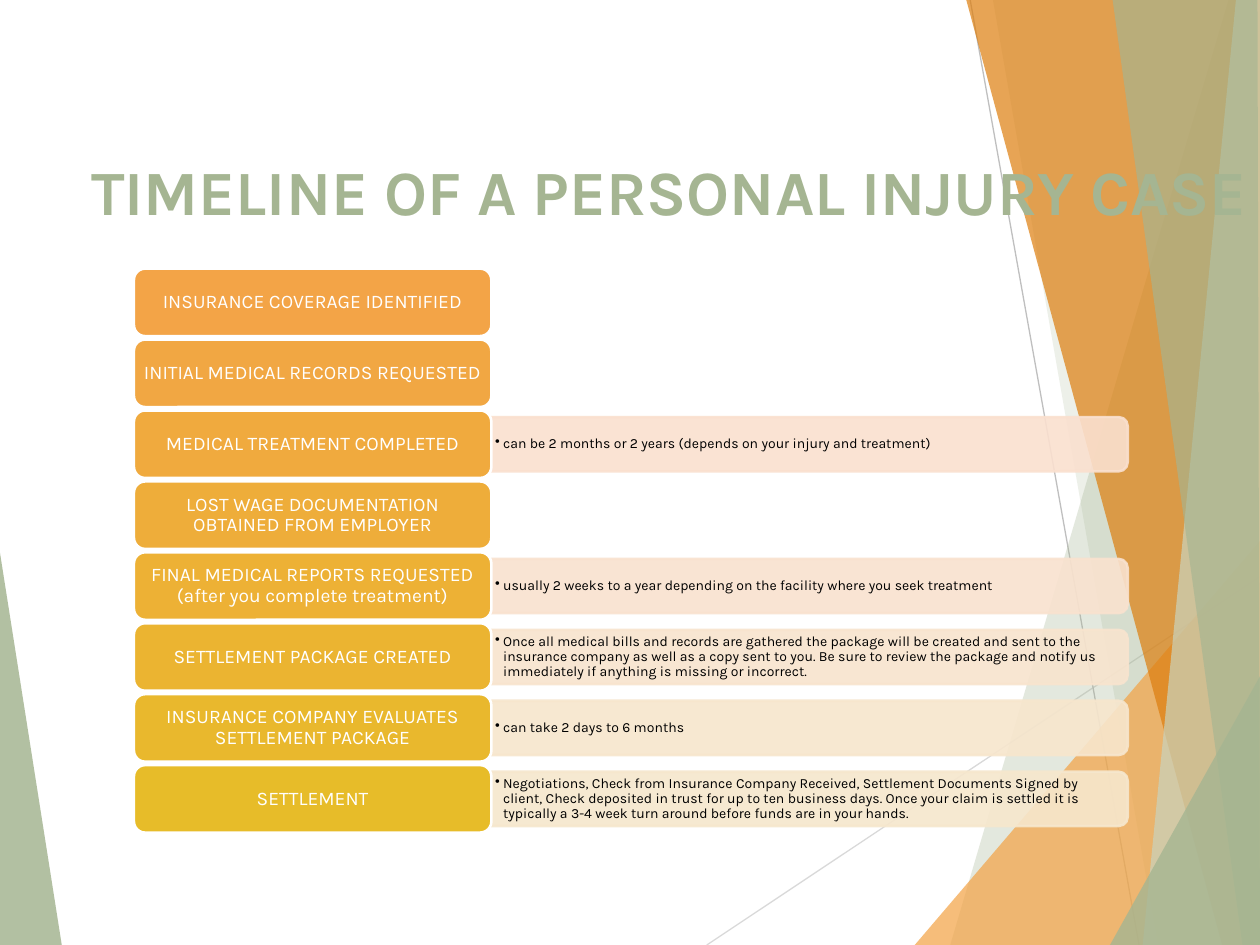
from dataclasses import dataclass

from lxml import etree
from pptx import Presentation
from pptx import util as u
from pptx.dml.color import RGBColor
from pptx.enum import shapes, text
from pptx.oxml.ns import qn


@dataclass(frozen=True)
class Theme:
    font: str = "Karla"
    title_size: float = 36
    step_size: float = 11
    detail_size: float = 8
    green: str = "A5B592"
    pale_green: str = "C9D3BE"
    orange: str = "F3A447"
    dark_orange: str = "DD7E0E"
    white: str = "FFFFFF"
    black: str = "000000"
    light_line: str = "D9D9D9"
    mid_line: str = "BFBFBF"


THEME = Theme()

# Background facets: corner points, colour, opacity in percent
FACETS = [
    ([(0, 316), (35.3, 540), (0, 540)], THEME.green, 85),
    ([(702, 0), (543, 540), (721, 540), (720.5, 0)], THEME.green, 30),
    ([(567.4, 0), (661.7, 540), (720.7, 540), (720.7, 0)], THEME.green, 20),
    ([(522.7, 540), (720, 309), (720.7, 540)], THEME.orange, 72),
    ([(552.2, 0), (698.4, 540), (720.7, 540), (720.7, 0)], THEME.dark_orange, 70),
    ([(706.3, 0), (653, 540), (720.7, 540), (720, 0)], THEME.pale_green, 70),
    ([(635.8, 0), (710, 540), (720, 540), (718.6, 0)], THEME.green, 65),
    ([(634.3, 540), (720.7, 385.2), (720.7, 540)], THEME.green, 80),
]
LINES = [
    ((403.9, 540), (720.7, 329), THEME.light_line),
    ((554.4, 0), (650.9, 540), THEME.mid_line),
]

# Steps: label, colour, detail, detail colour
STEPS = [
    ("INSURANCE COVERAGE IDENTIFIED", "F3A447", None, None),
    ("INITIAL MEDICAL RECORDS REQUESTED", "F1A743", None, None),
    ("MEDICAL TREATMENT COMPLETED", "F0AA3E",
     "can be 2 months or 2 years (depends on your injury and treatment)", "FAE0CF"),
    ("LOST WAGE DOCUMENTATION OBTAINED FROM EMPLOYER", "EEAD3A", None, None),
    ("FINAL MEDICAL REPORTS REQUESTED (after you complete treatment)", "EDB135",
     "usually 2 weeks to a year depending on the facility where you seek treatment",
     "F9E2CF"),
    ("SETTLEMENT PACKAGE CREATED", "EBB431",
     "Once all medical bills and records are gathered the package will be created and "
     "sent to the insurance company as well as a copy sent to you. Be sure to review "
     "the package and notify us immediately if anything is missing or incorrect.",
     "F8E4CE"),
    ("INSURANCE COMPANY EVALUATES SETTLEMENT PACKAGE", "E9B82D",
     "can take 2 days to 6 months", "F7E6CD"),
    ("SETTLEMENT", "E7BC29",
     "Negotiations, Check from Insurance Company Received, Settlement Documents Signed "
     "by client, Check deposited in trust for up to ten business days. Once your claim "
     "is settled it is typically a 3-4 week turn around before funds are in your hands.",
     "F6E7CD"),
]
STEP_LEFT, STEP_TOP, STEP_WIDTH, STEP_HEIGHT = 76.5, 153.5, 204.3, 38.6
STEP_PITCH = 40.53
DETAIL_WIDTH, DETAIL_HEIGHT = 363.6, 31


def paint(color_format, color, opacity=100):
    color_format.rgb = RGBColor.from_string(color)
    if opacity < 100:
        for node in color_format._xFill.iter(qn("a:srgbClr")):
            etree.SubElement(node, qn("a:alpha"), val=str(opacity * 1000))


def style_shape(shape, color, opacity=100, line=None):
    shape.shadow.inherit = False
    shape.fill.solid()
    set_color(shape.fill, color, opacity)
    if line is None:
        shape.line.fill.background()
    else:
        shape.line.width = u.Pt(1.5)
        shape.line.fill.solid()
        set_color(shape.line.fill, line, opacity)


def set_color(fill, color, opacity):
    fill.fore_color.rgb = RGBColor.from_string(color)
    if opacity < 100:
        node = fill._xPr.find(qn("a:solidFill")).find(qn("a:srgbClr"))
        etree.SubElement(node, qn("a:alpha"), val=str(opacity * 1000))


def write(shape, content, *, size, color, bold=False, align=text.PP_ALIGN.LEFT,
          anchor=text.MSO_ANCHOR.MIDDLE, margins=(7.2, 3.6), bullet_indent=0):
    frame = shape.text_frame
    frame.word_wrap = True
    frame.vertical_anchor = anchor
    frame.margin_left = frame.margin_right = u.Pt(margins[0])
    frame.margin_top = frame.margin_bottom = u.Pt(margins[1])
    paragraph = frame.paragraphs[0]
    paragraph.alignment = align
    paragraph.line_spacing = 0.9
    run = paragraph.add_run()
    run.text = content
    run.font.name = THEME.font
    run.font.size = u.Pt(size)
    run.font.bold = bold
    run.font.color.rgb = RGBColor.from_string(color)
    if bullet_indent:
        properties = paragraph._p.get_or_add_pPr()
        properties.set("marL", str(u.Pt(bullet_indent)))
        properties.set("indent", str(-u.Pt(bullet_indent)))
        etree.SubElement(properties, qn("a:buChar"), char="•")


def add_facet(slide, points, color, opacity):
    corners = [(u.Pt(x), u.Pt(y)) for x, y in points]
    builder = slide.shapes.build_freeform(*corners[0])
    builder.add_line_segments(corners[1:], close=True)
    style_shape(builder.convert_to_shape(), color, opacity)


def add_line(slide, start, end, color):
    line = slide.shapes.add_connector(
        shapes.MSO_CONNECTOR.STRAIGHT, *(u.Pt(value) for value in start + end))
    line.line.width = u.Pt(0.75)
    line.line.color.rgb = RGBColor.from_string(color)
    etree.SubElement(line._element.spPr, qn("a:effectLst"))


def add_title(slide, content):
    box = slide.shapes.add_textbox(u.Pt(36), u.Pt(48.2), u.Pt(684), u.Pt(86.4))
    write(box, content, size=THEME.title_size, color=THEME.green, bold=True,
          anchor=text.MSO_ANCHOR.BOTTOM)


def add_detail(slide, content, middle, color):
    left = STEP_LEFT + STEP_WIDTH
    # The bar is an upright shape turned a quarter, so its round end faces right
    bar = slide.shapes.add_shape(
        shapes.MSO_SHAPE.ROUND_2_SAME_RECTANGLE,
        u.Pt(left + (DETAIL_WIDTH - DETAIL_HEIGHT) / 2), u.Pt(middle - DETAIL_WIDTH / 2),
        u.Pt(DETAIL_HEIGHT), u.Pt(DETAIL_WIDTH))
    bar.rotation = 90
    style_shape(bar, color, 90, line=color)
    box = slide.shapes.add_textbox(
        u.Pt(left), u.Pt(middle - 14), u.Pt(DETAIL_WIDTH - 1.5), u.Pt(28))
    write(box, content, size=THEME.detail_size, color=THEME.black,
          margins=(2.2, 1.4), bullet_indent=4.5)


def add_step(slide, label, top, color):
    step = slide.shapes.add_shape(
        shapes.MSO_SHAPE.ROUNDED_RECTANGLE, u.Pt(STEP_LEFT), u.Pt(top),
        u.Pt(STEP_WIDTH), u.Pt(STEP_HEIGHT))
    style_shape(step, color, line=THEME.white)
    write(step, label, size=THEME.step_size, color=THEME.white,
          align=text.PP_ALIGN.CENTER, margins=(3.3, 1.6))


def main():
    presentation = Presentation()
    presentation.slide_width, presentation.slide_height = u.Pt(720), u.Pt(540)
    slide = presentation.slides.add_slide(presentation.slide_layouts[6])

    # Background: left facet, thin lines, then the facets on the right
    add_facet(slide, *FACETS[0])
    for line in LINES:
        add_line(slide, *line)
    for facet in FACETS[1:]:
        add_facet(slide, *facet)

    add_title(slide, " TIMELINE OF A PERSONAL INJURY CASE")

    # Timeline rows
    for row, (label, color, detail, detail_color) in enumerate(STEPS):
        top = STEP_TOP + row * STEP_PITCH
        if detail:
            add_detail(slide, detail, top + STEP_HEIGHT / 2, detail_color)
        add_step(slide, label, top, color)

    presentation.save("out.pptx")


if __name__ == "__main__":
    main()
